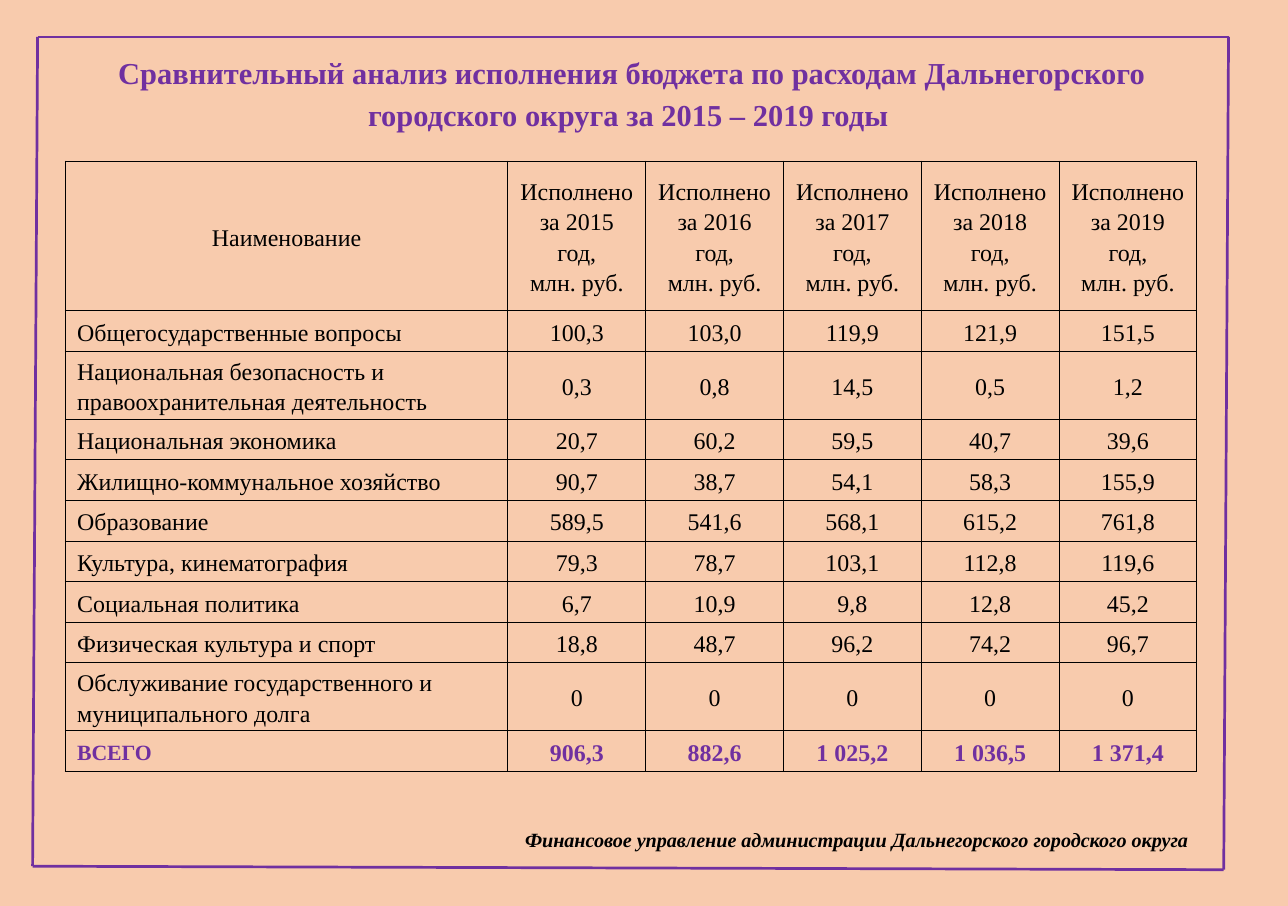
from dataclasses import dataclass

from lxml import etree
from pptx import Presentation
from pptx.dml.color import RGBColor
from pptx.enum import shapes, text
from pptx.oxml import ns
from pptx.util import Pt


@dataclass(frozen=True)
class Theme:
    font: str = "Times New Roman"
    background: str = "F8CBAD"
    accent: str = "7030A0"
    ink: str = "000000"
    title_size: float = 14
    table_size: float = 11
    total_size: float = 10
    footer_size: float = 9.3
    frame_width: float = 1.25
    border_width: float = 0.5
    line_spacing: float = 1.15


@dataclass(frozen=True)
class Style:
    size: float
    color: str
    bold: bool = False
    italic: bool = False
    align: text.PP_ALIGN = text.PP_ALIGN.LEFT
    spacing: float = 1.0


@dataclass(frozen=True)
class Box:
    left: float
    top: float
    width: float
    height: float
    words: str
    style: Style
    margin_left: float = 7.2


@dataclass(frozen=True)
class Edge:
    x1: float
    y1: float
    x2: float
    y2: float


@dataclass(frozen=True)
class BudgetRow:
    name: str
    values: tuple[str, ...]
    height: float
    name_style: Style
    value_style: Style


THEME = Theme()
CENTER = text.PP_ALIGN.CENTER
TITLE = Style(THEME.title_size, THEME.accent, True, False, CENTER, THEME.line_spacing)
FOOTER = Style(THEME.footer_size, THEME.ink, True, True)
NAME = Style(THEME.table_size, THEME.ink, spacing=THEME.line_spacing)
VALUE = Style(THEME.table_size, THEME.ink, align=CENTER, spacing=THEME.line_spacing)
TOTAL_NAME = Style(THEME.total_size, THEME.accent, True, spacing=THEME.line_spacing)
TOTAL_VALUE = Style(THEME.table_size, THEME.accent, True, align=CENTER,
                    spacing=THEME.line_spacing)

BOXES = (
    Box(217.4, 377.3, 357.8, 18.7,
        "Финансовое управление администрации Дальнегорского городского округа",
        FOOTER, margin_left=24.2),
    Box(17.3, 18.7, 547.2, 44.6,
        "Сравнительный анализ исполнения бюджета по расходам Дальнегорского "
        "городского округа за 2015 – 2019 годы ", TITLE),
)

FRAME = (
    Edge(17.3, 17, 15, 398.6),
    Edge(565.2, 17, 563, 400.2),
    Edge(565.2, 17, 17.3, 17),
    Edge(563, 400.2, 15, 398.6),
)

TABLE_LEFT, TABLE_TOP = 30.1, 74.1
NAME_WIDTH, YEAR_WIDTH = 203.6, 63.4
HEADER_HEIGHT, ROW_HEIGHT, TALL_HEIGHT = 69, 18.7, 31.2
CELL_MARGIN = 5.4
YEARS = range(2015, 2020)

EXPENSES = (
    ("Общегосударственные вопросы", "100,3", "103,0", "119,9", "121,9", "151,5"),
    ("Национальная безопасность и правоохранительная деятельность",
     "0,3", "0,8", "14,5", "0,5", "1,2"),
    ("Национальная экономика", "20,7", "60,2", "59,5", "40,7", "39,6"),
    ("Жилищно-коммунальное хозяйство", "90,7", "38,7", "54,1", "58,3", "155,9"),
    ("Образование", "589,5", "541,6", "568,1", "615,2", "761,8"),
    ("Культура, кинематография", "79,3", "78,7", "103,1", "112,8", "119,6"),
    ("Социальная политика", "6,7", "10,9", "9,8", "12,8", "45,2"),
    ("Физическая культура и спорт", "18,8", "48,7", "96,2", "74,2", "96,7"),
    ("Обслуживание государственного и муниципального долга",
     "0", "0", "0", "0", "0"),
)
TWO_LINE_LENGTH = 40


def budget_rows() -> list[BudgetRow]:
    headings = tuple(f"Исполнено за {year} год,\nмлн. руб." for year in YEARS)
    header = BudgetRow("Наименование", headings, HEADER_HEIGHT, VALUE, VALUE)
    body = [
        BudgetRow(name, tuple(values),
                  TALL_HEIGHT if len(name) > TWO_LINE_LENGTH else ROW_HEIGHT,
                  NAME, VALUE)
        for name, *values in EXPENSES
    ]
    total = BudgetRow("ВСЕГО", ("906,3", "882,6", "1 025,2", "1 036,5", "1 371,4"),
                      ROW_HEIGHT, TOTAL_NAME, TOTAL_VALUE)
    return [header, *body, total]


def write(tf, words: str, style: Style) -> None:
    tf.text = words
    for p in tf.paragraphs:
        p.alignment = style.align
        p.line_spacing = style.spacing
        for r in p.runs:
            r.font.name = THEME.font
            r.font.size = Pt(style.size)
            r.font.bold = style.bold
            r.font.italic = style.italic
            r.font.color.rgb = RGBColor.from_string(style.color)


def add_box(s, box: Box) -> None:
    sp = s.shapes.add_textbox(Pt(box.left), Pt(box.top), Pt(box.width), Pt(box.height))
    tf = sp.text_frame
    tf.word_wrap = True
    tf.margin_left = Pt(box.margin_left)
    write(tf, box.words, box.style)


def add_edge(s, edge: Edge) -> None:
    line = s.shapes.add_connector(shapes.MSO_CONNECTOR.STRAIGHT,
                                  Pt(edge.x1), Pt(edge.y1), Pt(edge.x2), Pt(edge.y2))
    line.line.color.rgb = RGBColor.from_string(THEME.accent)
    line.line.width = Pt(THEME.frame_width)
    etree.SubElement(line._element.spPr, ns.qn("a:effectLst"))


def add_borders(cell) -> None:
    tc_pr = cell._tc.get_or_add_tcPr()
    for position, side in enumerate(("a:lnL", "a:lnR", "a:lnT", "a:lnB")):
        ln = etree.Element(ns.qn(side), w=str(Pt(THEME.border_width)))
        fill = etree.SubElement(ln, ns.qn("a:solidFill"))
        etree.SubElement(fill, ns.qn("a:srgbClr"), val=THEME.ink)
        tc_pr.insert(position, ln)


def fill_cell(cell, words: str, style: Style) -> None:
    cell.fill.background()
    cell.vertical_anchor = text.MSO_ANCHOR.MIDDLE
    cell.margin_left = cell.margin_right = Pt(CELL_MARGIN)
    cell.margin_top = cell.margin_bottom = Pt(0)
    write(cell.text_frame, words, style)
    add_borders(cell)


def add_budget_table(s, rows: list[BudgetRow]) -> None:
    widths = [NAME_WIDTH] + [YEAR_WIDTH] * len(YEARS)
    table = s.shapes.add_table(len(rows), len(widths), Pt(TABLE_LEFT), Pt(TABLE_TOP),
                               Pt(sum(widths)), Pt(sum(row.height for row in rows))).table
    table.first_row = table.horz_banding = False
    for column, width in zip(table.columns, widths):
        column.width = Pt(width)
    for i, row in enumerate(rows):
        table.rows[i].height = Pt(row.height)
        fill_cell(table.cell(i, 0), row.name, row.name_style)
        for j, value in enumerate(row.values, start=1):
            fill_cell(table.cell(i, j), value, row.value_style)


def main() -> None:
    prs = Presentation()
    prs.slide_width, prs.slide_height = Pt(592.56), Pt(416.88)
    s = prs.slides.add_slide(prs.slide_layouts[6])
    s.background.fill.solid()
    s.background.fill.fore_color.rgb = RGBColor.from_string(THEME.background)
    for edge in FRAME:
        add_edge(s, edge)
    for box in BOXES:
        add_box(s, box)
    add_budget_table(s, budget_rows())
    prs.save("out.pptx")


if __name__ == "__main__":
    main()
